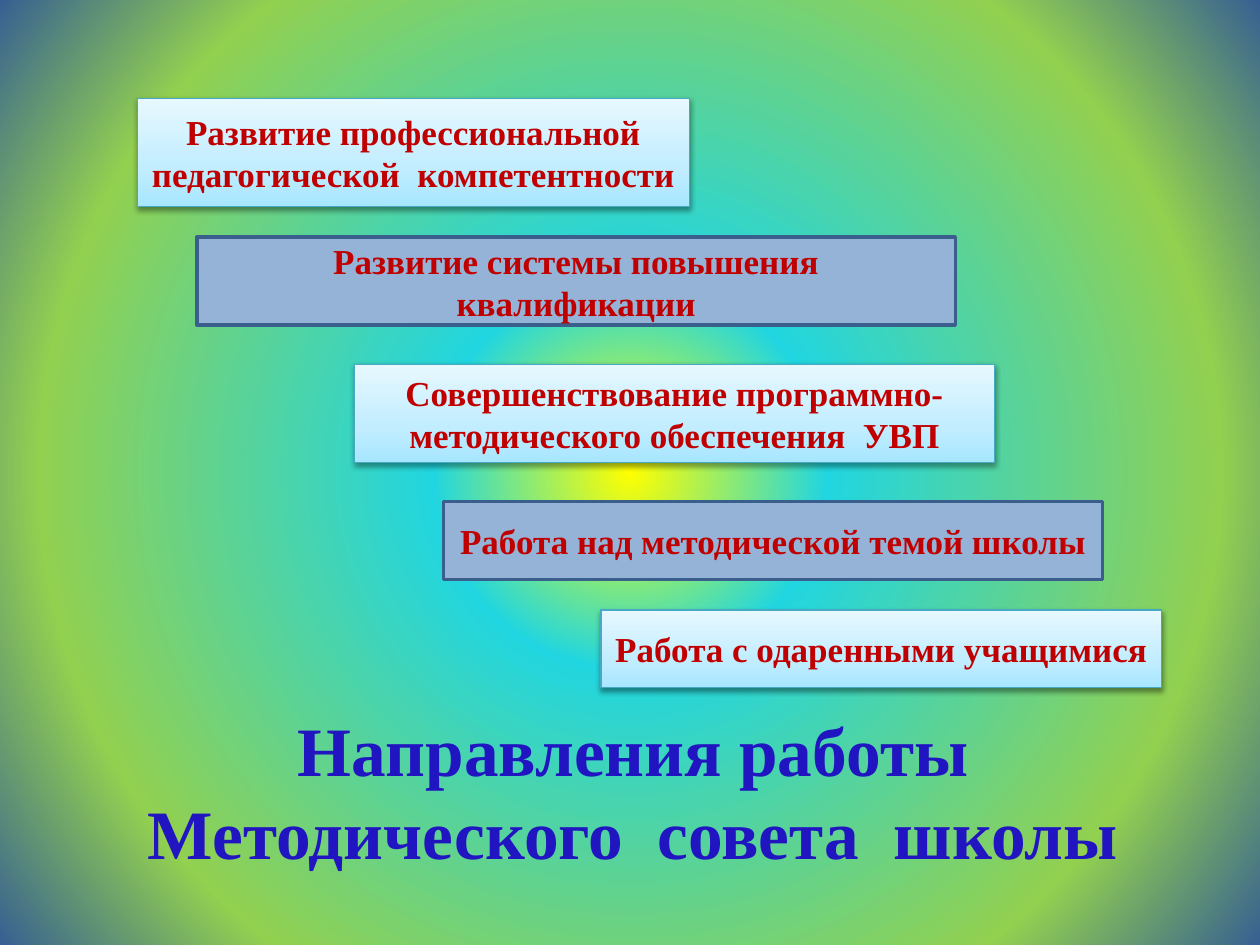
import pptx
import pptx.dml.color
import pptx.enum.shapes
import pptx.enum.text
import pptx.oxml
import pptx.oxml.ns
import pptx.util
from lxml import etree

Pt = pptx.util.Pt
qn = pptx.oxml.ns.qn

COLORS = {
    "title": "2115C1",
    "label": "C00000",
    "light_line": "46AAC5",
    "blue_fill": "95B3D7",
    "blue_line": "3A5F8C",
    "shadow": "000000",
}
LIGHT_STOPS = {0: "A7E6FF", 35: "C1EDFF", 100: "E7F8FF"}
BACKGROUND_STOPS = {0: "FFFF00", 25: "21D6E0", 75: "92D050", 99.99: "376092", 100: "005CBF"}

DIRECTIONS = [
    ("Развитие профессиональной педагогической  компетентности", 78.5, 56.2, 315.4, 61.9),
    ("Развитие системы повышения квалификации", 112.5, 135.4, 433.4, 50.4),
    ("Совершенствование программно-методического обеспечения  УВП", 202.5, 208.1, 365.8, 56.2),
    ("Работа над методической темой школы", 253.4, 286.6, 376.6, 44.6),
    ("Работа с одаренными учащимися", 343.4, 348.5, 320.4, 44.6),
]


def rgb(name):
    return pptx.dml.color.RGBColor.from_string(COLORS[name])


def write_text(shape, text, size=20, color="label", font="Times New Roman"):
    frame = shape.text_frame
    frame.word_wrap = True
    frame.vertical_anchor = pptx.enum.text.MSO_ANCHOR.MIDDLE
    frame.text = text
    for paragraph in frame.paragraphs:
        paragraph.alignment = pptx.enum.text.PP_ALIGN.CENTER
        for run in paragraph.runs:
            run.font.name = font
            run.font.size = Pt(size)
            run.font.bold = True
            run.font.color.rgb = rgb(color)


def set_gradient(fill, properties, stops, angle=None):
    fill.gradient()
    gradient = properties.find(qn("a:gradFill"))
    for child in list(gradient):
        gradient.remove(child)
    stop_list = etree.SubElement(gradient, qn("a:gsLst"))
    for position, color in stops.items():
        stop = etree.SubElement(stop_list, qn("a:gs"), pos=str(round(position * 1000)))
        etree.SubElement(stop, qn("a:srgbClr"), val=color)
    if angle is None:
        circle = etree.SubElement(gradient, qn("a:path"), path="circle")
        sides = dict.fromkeys("ltrb", "50000")
        etree.SubElement(circle, qn("a:fillToRect"), **sides)
    else:
        etree.SubElement(gradient, qn("a:lin"), ang=str(angle * 60000), scaled="0")


class SlideBuilder:
    def __init__(self, slide):
        self.slide = slide

    def background(self, stops):
        fill = self.slide.background.fill
        fill.gradient()
        properties = self.slide.element.find(".//" + qn("p:bgPr"))
        set_gradient(fill, properties, stops)

    def title(self, text, left, top, width, height):
        box = self.slide.shapes.add_textbox(Pt(left), Pt(top), Pt(width), Pt(height))
        write_text(box, text, size=39.6, color="title")

    def box(self, text, left, top, width, height, light):
        shape = self.slide.shapes.add_shape(
            pptx.enum.shapes.MSO_SHAPE.RECTANGLE, Pt(left), Pt(top), Pt(width), Pt(height)
        )
        shape.shadow.inherit = False
        if light:
            set_gradient(shape.fill, shape.element.spPr, LIGHT_STOPS, angle=270)
        else:
            shape.fill.solid()
            shape.fill.fore_color.rgb = rgb("blue_fill")
        shape.line.color.rgb = rgb("light_line" if light else "blue_line")
        shape.line.width = Pt(0.75 if light else 2)
        if light:
            self.shadow(shape)
        write_text(shape, text)

    def shadow(self, shape):
        effects = shape.element.spPr.find(qn("a:effectLst"))
        outer = etree.SubElement(
            effects, qn("a:outerShdw"), blurRad=str(Pt(3.1)), dist=str(Pt(1.6)),
            dir="5400000", rotWithShape="0",
        )
        color = etree.SubElement(outer, qn("a:srgbClr"), val=COLORS["shadow"])
        etree.SubElement(color, qn("a:alpha"), val="38000")


def main():
    presentation = pptx.Presentation()
    presentation.slide_width = Pt(720)
    presentation.slide_height = Pt(540)
    builder = SlideBuilder(presentation.slides.add_slide(presentation.slide_layouts[6]))
    builder.background(BACKGROUND_STOPS)
    builder.title("Направления работы\vМетодического  совета  школы", 39.6, 427.7, 644.4, 47.5)
    for index, direction in enumerate(DIRECTIONS):
        builder.box(*direction, light=index % 2 == 0)
    presentation.save("out.pptx")


if __name__ == "__main__":
    main()
